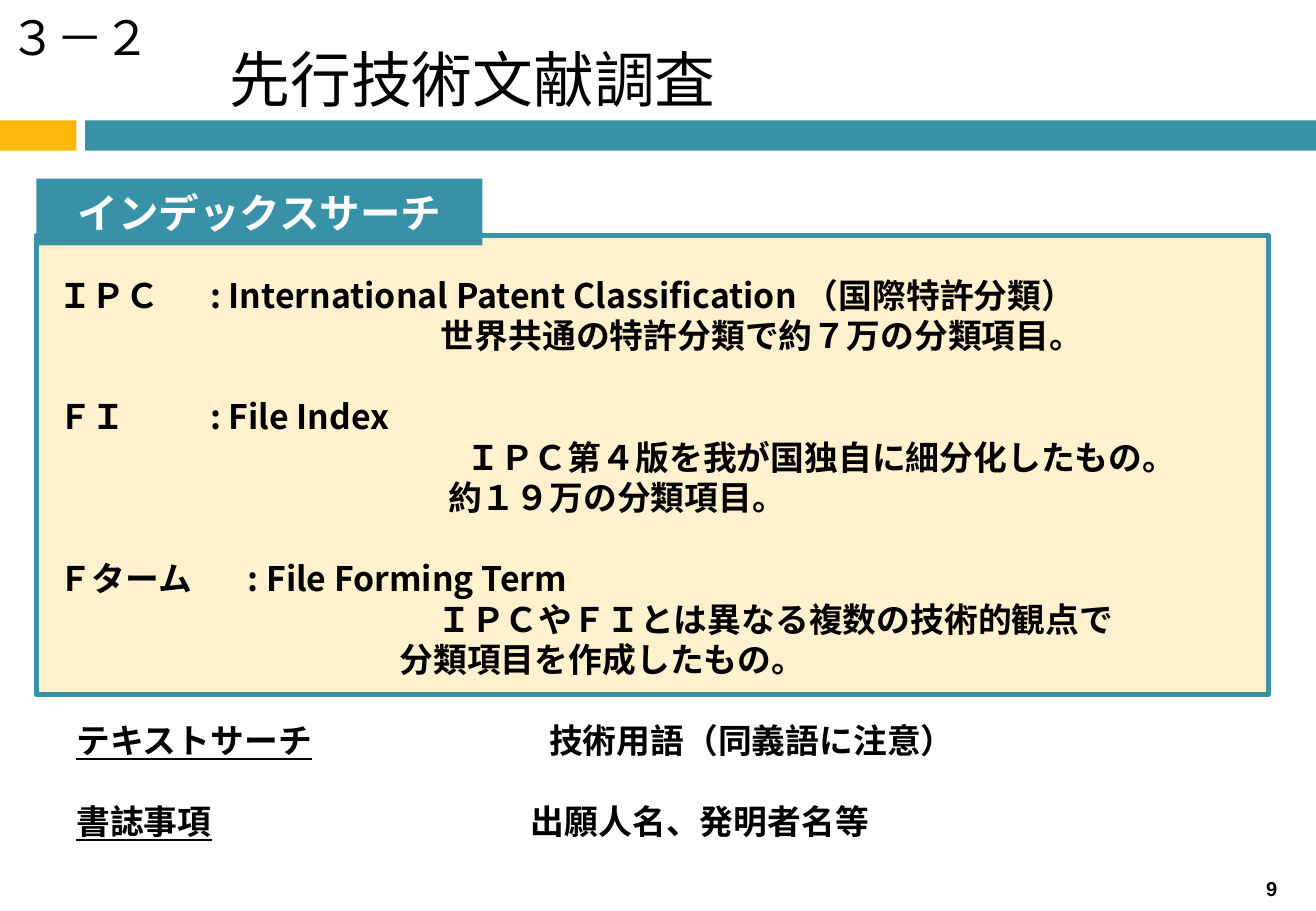
from lxml.etree import SubElement
from pptx import Presentation
from pptx.dml.color import RGBColor
from pptx.enum.shapes import MSO_SHAPE
from pptx.enum.text import MSO_ANCHOR as ANCHOR, PP_ALIGN as ALIGN
from pptx.oxml.ns import qn
from pptx.util import Inches, Pt

TEAL = RGBColor(0x38, 0x91, 0xA7)
AMBER = RGBColor(0xFE, 0xB8, 0x0A)
CREAM = RGBColor(0xFF, 0xF1, 0xCE)
BLACK = RGBColor(0, 0, 0)
WHITE = RGBColor(0xFF, 0xFF, 0xFF)
JAPANESE = "Noto Sans CJK JP"
LATIN = "Arial"

SECTION = "３－２"
TITLE = "先行技術文献調査"
HEADING = "インデックスサーチ"
PAGE = "9"

INDEXES = [
    ("ＩＰＣ", ": International Patent Classification （国際特許分類）", 1.25,
     [("世界共通の特許分類で約７万の分類項目。", 3.15)]),
    ("ＦＩ", ": File Index", 1.25,
     [("ＩＰＣ第４版を我が国独自に細分化したもの。", 3.36),
      ("約１９万の分類項目。", 3.21)]),
    ("Ｆターム", ": File Forming Term", 1.56,
     [("ＩＰＣやＦＩとは異なる複数の技術的観点で", 3.12),
      ("分類項目を作成したもの。", 2.81)]),
]
OTHER_SEARCHES = [
    ("テキストサーチ", "技術用語（同義語に注意）", 3.89),
    ("書誌事項", "出願人名、発明者名等", 3.74),
]


def add_bar(slide, box, fill, line=None):
    bar = slide.shapes.add_shape(MSO_SHAPE.RECTANGLE, *map(Inches, box))
    bar.shadow.inherit = False
    bar.fill.solid()
    bar.fill.fore_color.rgb = fill
    if line is None:
        bar.line.fill.background()
    else:
        bar.line.color.rgb = line
        bar.line.width = Pt(3)
    return bar


def add_box(slide, box):
    return slide.shapes.add_textbox(*map(Inches, box))


def write(shape, rows, size=20, font=JAPANESE, color=BLACK, bold=True,
          align=ALIGN.LEFT, anchor=ANCHOR.TOP, wrap=True, pitch=None):
    frame = shape.text_frame
    frame.word_wrap = wrap
    frame.vertical_anchor = anchor
    for number, row in enumerate(rows):
        paragraph = frame.paragraphs[0] if number == 0 else frame.add_paragraph()
        paragraph.alignment = align
        properties = paragraph._p.get_or_add_pPr()
        if "indent" in row:
            properties.set("marL", str(Inches(row["indent"])))
            properties.set("indent", "0")
        if "tab" in row:
            tabs = SubElement(properties, qn("a:tabLst"))
            SubElement(tabs, qn("a:tab"), pos=str(Inches(row["tab"])), algn="l")
        if pitch:
            paragraph.line_spacing = Pt(pitch)
        if row.get("gap"):
            paragraph.space_before = Pt(pitch)
        for text, underline in row["runs"]:
            run = paragraph.add_run()
            run.text = text
            run.font.size = Pt(size)
            run.font.name = font
            run.font.bold = bold
            run.font.underline = underline
            run.font.color.rgb = color
            SubElement(run._r.get_or_add_rPr(), qn("a:ea"), typeface=JAPANESE)


def single(text):
    return [{"runs": [(text, False)]}]


def index_rows():
    rows = []
    for number, (label, name, tab, details) in enumerate(INDEXES):
        rows.append({"runs": [(f"{label}\t{name}", False)], "tab": tab,
                     "gap": number > 0})
        rows += [{"runs": [(text, False)], "indent": indent}
                 for text, indent in details]
    return rows


def search_rows():
    return [{"runs": [(label, True), (f"\t{detail}", False)], "tab": tab,
             "gap": number > 0}
            for number, (label, detail, tab) in enumerate(OTHER_SEARCHES)]


def main():
    deck = Presentation()
    deck.slide_width, deck.slide_height = Inches(10.83), Inches(7.5)
    slide = deck.slides.add_slide(deck.slide_layouts[6])

    add_bar(slide, (0, 0.99, 0.63, 0.25), AMBER)
    add_bar(slide, (0.7, 0.99, 10.13, 0.25), TEAL)
    write(add_box(slide, (0.03, 0.28, 7.72, 0.72)), single(TITLE), size=36,
          bold=False, align=ALIGN.CENTER, anchor=ANCHOR.MIDDLE)

    add_bar(slide, (0.3, 1.94, 10.14, 3.78), CREAM, TEAL)
    heading = add_bar(slide, (0.3, 1.47, 3.67, 0.55), TEAL)
    write(heading, single(HEADING), size=24, font=LATIN, color=WHITE,
          align=ALIGN.CENTER, anchor=ANCHOR.MIDDLE, wrap=False)

    write(add_box(slide, (0.38, 2.21, 10.25, 3.43)), index_rows(), pitch=24)
    write(add_box(slide, (0.53, 5.88, 8.91, 1.1)), search_rows(), pitch=24)
    write(add_box(slide, (-0.02, 0, 1.97, 0.57)), single(SECTION), size=28,
          bold=False, pitch=35)
    write(add_box(slide, (10.15, 7.18, 0.63, 0.27)), single(PAGE), size=11.9,
          font=LATIN, align=ALIGN.CENTER, anchor=ANCHOR.MIDDLE)

    deck.save("out.pptx")


if __name__ == "__main__":
    main()
